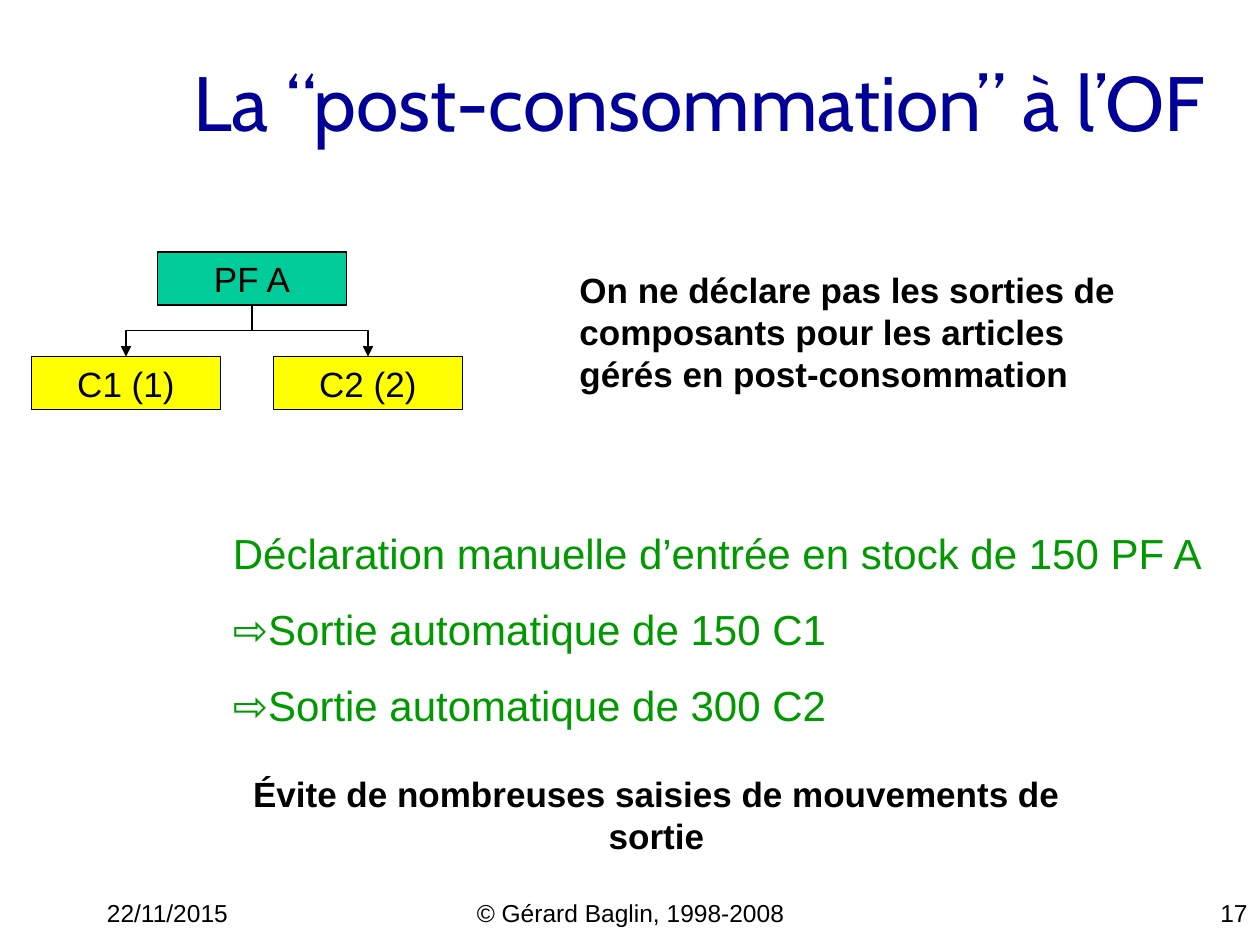
from dataclasses import dataclass

from pptx import Presentation
from pptx.dml.color import RGBColor
from pptx.enum.shapes import MSO_CONNECTOR, MSO_SHAPE
from pptx.enum.text import MSO_ANCHOR, PP_ALIGN
from pptx.oxml.ns import qn
from pptx.shapes.autoshape import Shape
from pptx.slide import Slide
from pptx.util import Inches, Pt
from lxml.etree import SubElement


@dataclass(frozen=True)
class Theme:
    body: str = "Arial"
    head: str = "Cabin"
    black: str = "000000"
    navy: str = "000099"
    green: str = "009900"
    teal: str = "00CC99"
    yellow: str = "FFFF00"
    title: int = 44
    large: int = 24
    text: int = 20
    small: int = 14
    line: float = 0.75


THEME = Theme()


@dataclass(frozen=True)
class Label:
    text: str
    left: float
    top: float
    width: float
    height: float
    size: int = THEME.text
    align: PP_ALIGN = PP_ALIGN.LEFT
    color: str = THEME.black
    font: str = THEME.body
    bold: bool = False
    anchor: MSO_ANCHOR = MSO_ANCHOR.MIDDLE
    wrap: bool = True
    space: float = 1.0


@dataclass(frozen=True)
class Node:
    text: str
    left: float
    top: float
    fill: str
    width: float = 1.5
    height: float = 0.42


TOP = MSO_ANCHOR.TOP
LABELS = [
    Label("22/11/2015", 0.75, 7.08, 2.08, 0.25, THEME.small, anchor=TOP),
    Label("© Gérard Baglin, 1998-2008", 3.42, 7.08, 3.17, 0.25,
          THEME.small, PP_ALIGN.CENTER, anchor=TOP),
    Label("17", 7.92, 7.08, 2.08, 0.25, THEME.small, PP_ALIGN.RIGHT, anchor=TOP),
    Label("La “post-consommation” à l’OF", 0.25, 0.17, 9.42, 1.25,
          THEME.title, PP_ALIGN.RIGHT, THEME.navy, THEME.head),
    Label("On ne déclare pas les sorties de composants pour les articles "
          "gérés en post-consommation", 4.5, 2.08, 4.75, 1.1, bold=True),
    Label("Déclaration manuelle d’entrée en stock de 150 PF A\n"
          "⇨Sortie automatique de 150 C1\n"
          "⇨Sortie automatique de 300 C2", 1.75, 3.94, 7.91, 1.9,
          THEME.large, color=THEME.green, wrap=False, space=1.5),
    Label("Évite de nombreuses saisies de mouvements de sortie",
          1.5, 6.25, 7.42, 0.43, align=PP_ALIGN.CENTER, bold=True),
]
ROOT = Node("PF A", 1.25, 2, THEME.teal)
PARTS = [
    Node("C1 (1)", 0.25, 2.83, THEME.yellow),
    Node("C2 (2)", 2.17, 2.83, THEME.yellow),
]


def write(shape: Shape, item: Label) -> None:
    frame = shape.text_frame
    frame.text = item.text
    frame.word_wrap = item.wrap
    frame.vertical_anchor = item.anchor
    for para in frame.paragraphs:
        para.alignment = item.align
        para.line_spacing = item.space
        for run in para.runs:
            run.font.name = item.font
            run.font.size = Pt(item.size)
            run.font.bold = item.bold
            run.font.color.rgb = RGBColor.from_string(item.color)


def draw_label(slide: Slide, item: Label) -> None:
    box = slide.shapes.add_textbox(Inches(item.left), Inches(item.top),
                                   Inches(item.width), Inches(item.height))
    write(box, item)


def draw_node(slide: Slide, node: Node) -> Shape:
    box = slide.shapes.add_shape(
        MSO_SHAPE.RECTANGLE, Inches(node.left), Inches(node.top),
        Inches(node.width), Inches(node.height))
    box.shadow.inherit = False
    box.fill.solid()
    box.fill.fore_color.rgb = RGBColor.from_string(node.fill)
    box.line.color.rgb = RGBColor.from_string(THEME.black)
    box.line.width = Pt(THEME.line)
    write(box, Label(node.text, node.left, node.top, node.width, node.height,
                     align=PP_ALIGN.CENTER, wrap=False))
    return box


def draw_link(slide: Slide, start: Shape, end: Shape) -> None:
    x1, y1 = start.left + start.width // 2, start.top + start.height
    x2, y2 = end.left + end.width // 2, end.top
    link = slide.shapes.add_connector(MSO_CONNECTOR.ELBOW, x1, y1, x2, y2)
    link.begin_connect(start, 2)
    link.end_connect(end, 0)
    drop, span = y2 - y1, abs(x2 - x1)
    link.left, link.top = (x1 + x2 - drop) // 2, (y1 + y2 - span) // 2
    link.width, link.height = drop, span
    props = link._element.spPr
    frame = props.find(qn("a:xfrm"))
    frame.attrib.pop("flipH", None)
    if x2 > x1:
        frame.set("rot", str(270 * 60000))
        frame.set("flipH", "1")
    else:
        frame.set("rot", str(90 * 60000))
    link.line.color.rgb = RGBColor.from_string(THEME.black)
    link.line.width = Pt(THEME.line)
    SubElement(props.find(qn("a:ln")), qn("a:tailEnd"), type="triangle")
    SubElement(props, qn("a:effectLst"))


def main() -> None:
    deck = Presentation()
    deck.slide_width, deck.slide_height = Inches(10), Inches(7.5)
    slide = deck.slides.add_slide(deck.slide_layouts[6])
    for item in LABELS:
        draw_label(slide, item)
    root = draw_node(slide, ROOT)
    for part in PARTS:
        draw_link(slide, root, draw_node(slide, part))
    deck.save("out.pptx")


if __name__ == "__main__":
    main()
